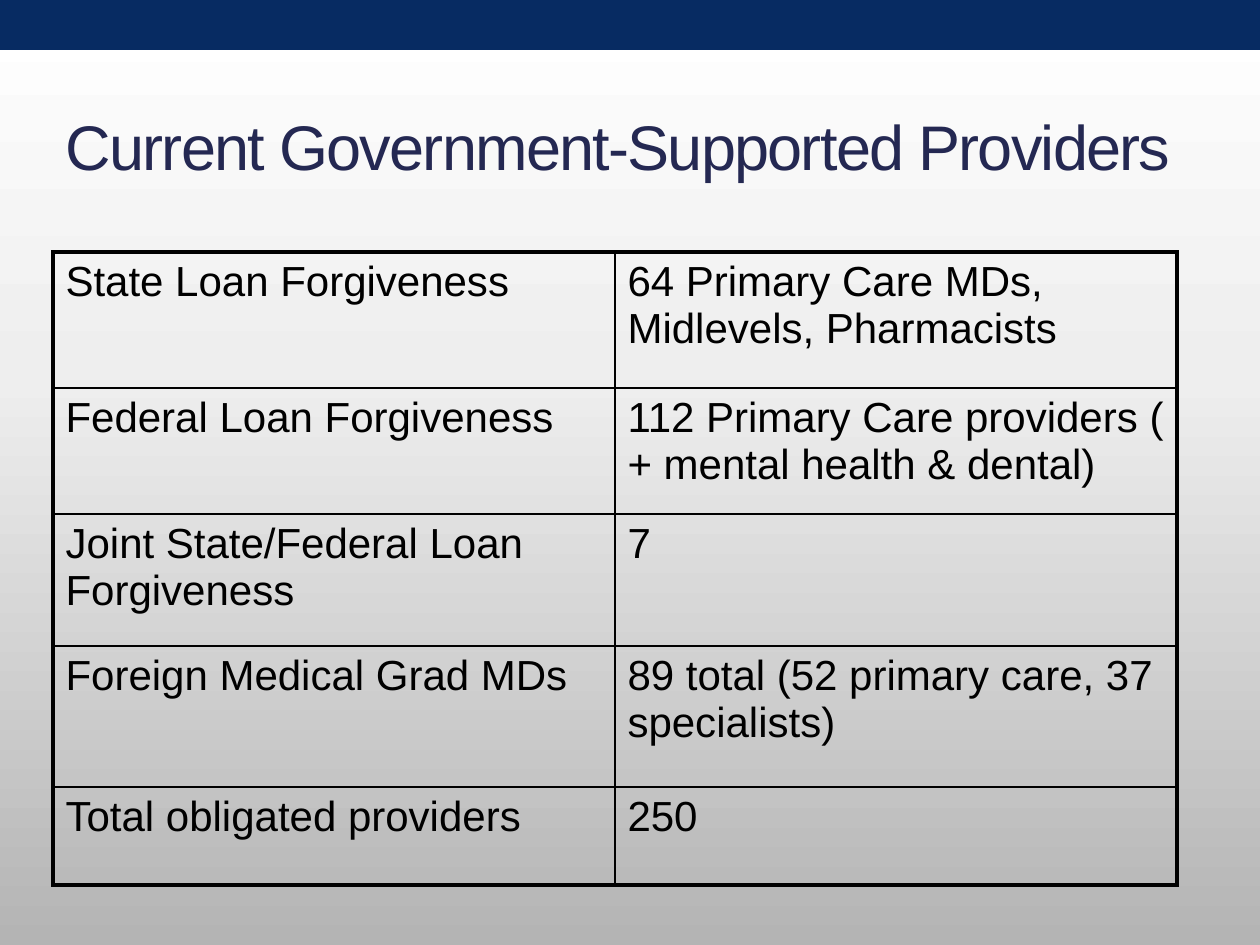
from lxml.etree import SubElement
from pptx import Presentation
from pptx.dml.color import RGBColor as Rgb
from pptx.enum.shapes import MSO_SHAPE as Shape
from pptx.enum.text import MSO_ANCHOR as Anchor, MSO_AUTO_SIZE as Fit, PP_ALIGN as Align
from pptx.oxml.ns import qn
from pptx.util import Emu, Pt

SCALE = 914400 // 126
COLORS = {"navy": "072B62", "title": "242852", "black": "000000",
          "white": "FFFFFF", "light": "EEEEEE", "grey": "B4B4B4"}
ROWS = [
    (136, "State Loan Forgiveness", "64 Primary Care MDs, Midlevels, Pharmacists"),
    (126, "Federal Loan Forgiveness",
     "112 Primary Care providers ( + mental health & dental)"),
    (132, "Joint State/Federal Loan Forgiveness", "7"),
    (141, "Foreign Medical Grad MDs", "89 total (52 primary care, 37 specialists)"),
    (98, "Total obligated providers", "250"),
]
THICK, THIN = 2.25, 1


def px(n):
    return Emu(n * SCALE)


def tint(name):
    return Rgb.from_string(COLORS[name])


def write(frame, text, size=24, color="black", font="Arial", track=0):
    para = frame.paragraphs[0]
    para.alignment = Align.LEFT
    run = para.add_run()
    run.text = text
    run.font.size, run.font.name = Pt(size), font
    run.font.color.rgb = tint(color)
    if track:
        run.font._element.set("spc", str(track * 100))


def add_back(slide):
    fill = slide.background.fill
    fill.gradient()
    fill.gradient_angle = 270
    stops = slide.element.find(".//" + qn("a:gsLst"))
    for stop in list(stops):
        stops.remove(stop)
    for pos, name in ((0, "white"), (40, "light"), (100, "grey")):
        stop = SubElement(stops, qn("a:gs"), pos=str(pos * 1000))
        SubElement(stop, qn("a:srgbClr"), val=COLORS[name])


def add_bar(slide, x, y, w, h, color):
    bar = slide.shapes.add_shape(Shape.RECTANGLE, px(x), px(y), px(w), px(h))
    bar.shadow.inherit = False
    bar.fill.solid()
    bar.fill.fore_color.rgb = tint(color)
    bar.line.fill.background()


def add_title(slide, x, y, w, h, text):
    title = slide.shapes.title
    title.left, title.top, title.width, title.height = map(px, (x, y, w, h))
    frame = title.text_frame
    frame.auto_size, frame.word_wrap = Fit.NONE, True
    frame.vertical_anchor = Anchor.MIDDLE
    write(frame, text, size=36, color="title", track=-1)


def set_edges(cell, widths):
    props = cell._tc.get_or_add_tcPr()
    for at, (side, width) in enumerate(zip("LRTB", widths)):
        line = SubElement(props, qn("a:ln" + side), w=str(Pt(width)))
        fill = SubElement(line, qn("a:solidFill"))
        SubElement(fill, qn("a:srgbClr"), val=COLORS["black"])
        props.insert(at, line)  # borders come before the fill


def add_grid(slide, x, y, w, rows):
    high, cols = sum(row[0] for row in rows), len(rows[0]) - 1
    table = slide.shapes.add_table(len(rows), cols, px(x), px(y),
                                   px(w), px(high)).table
    table.first_row = table.horz_banding = False
    for col in table.columns:
        col.width = px(w // cols)
    for r, (tall, *texts) in enumerate(rows):
        table.rows[r].height = px(tall)
        for c, text in enumerate(texts):
            cell = table.cell(r, c)
            cell.fill.background()
            write(cell.text_frame, text)
            # Only the outer frame is thick
            outer = (c == 0, c == cols - 1, r == 0, r == len(rows) - 1)
            set_edges(cell, [THICK if out else THIN for out in outer])


def main():
    deck = Presentation()
    deck.slide_width, deck.slide_height = px(1260), px(945)
    slide = deck.slides.add_slide(deck.slide_layouts[5])
    add_back(slide)
    # Header bars
    add_bar(slide, 0, 30, 1260, 32, "white")
    add_bar(slide, 0, 0, 1260, 50, "navy")
    # Title and table
    add_title(slide, 53, 63, 1166, 164, "Current Government-Supported Providers")
    add_grid(slide, 53, 252, 1124, ROWS)
    deck.save("out.pptx")


if __name__ == "__main__":
    main()
